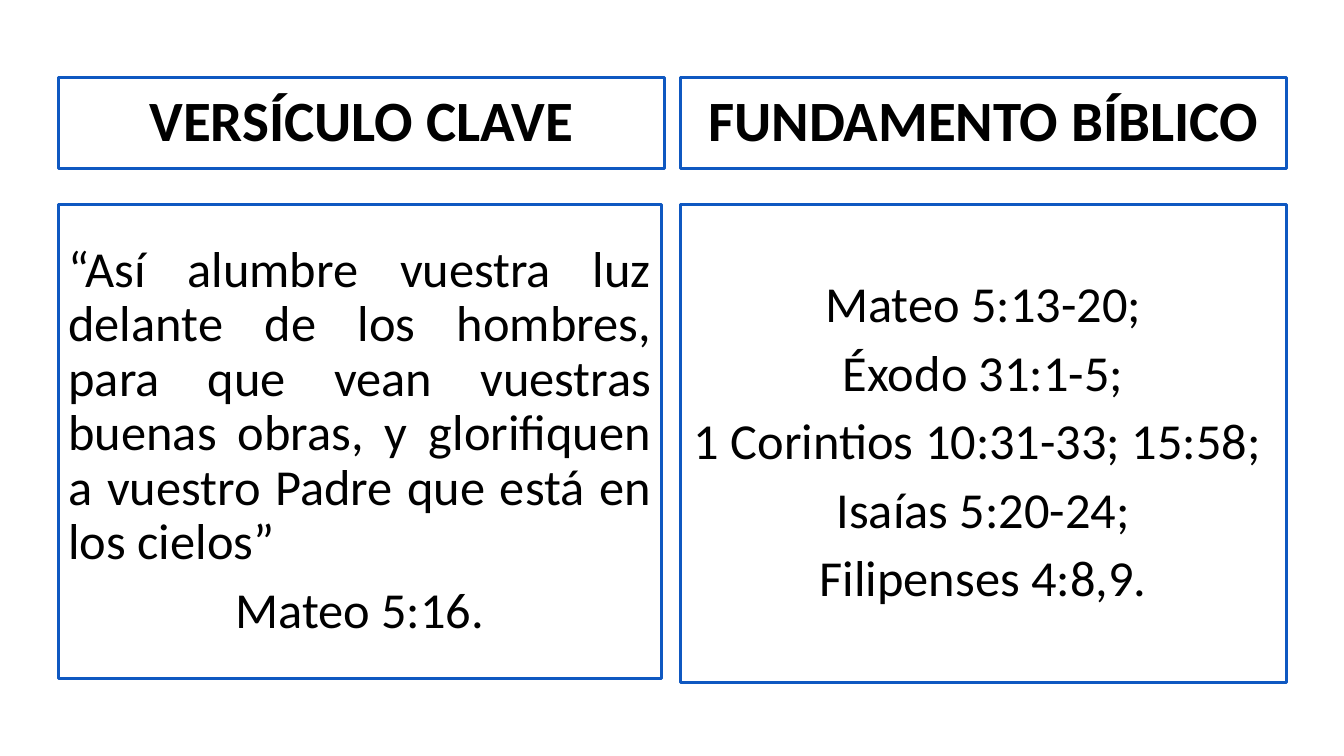
"""Build a slide with a key verse beside its Bible references."""
from pptx import Presentation
from pptx.dml.color import RGBColor
from pptx.enum.shapes import MSO_SHAPE
from pptx.enum.text import MSO_ANCHOR, PP_ALIGN
from pptx.util import Pt

BLACK = RGBColor(0x00, 0x00, 0x00)
BLUE = RGBColor(0x0F, 0x58, 0xC1)
CENTER, JUSTIFY = PP_ALIGN.CENTER, PP_ALIGN.JUSTIFY

COLUMNS = [
    {
        "heading": "VERSÍCULO CLAVE",
        "body": [
            ("“Así alumbre vuestra luz delante de los hombres, para que vean "
             "vuestras buenas obras, y glorifiquen a vuestro Padre que está en "
             "los cielos”", JUSTIFY),
            ("Mateo 5:16.", CENTER),
        ],
        "body_size": (430.5, 338.4),
    },
    {
        "heading": "FUNDAMENTO BÍBLICO",
        "body": [
            ("Mateo 5:13-20;", CENTER),
            ("Éxodo 31:1-5;", CENTER),
            ("1 Corintios 10:31-33; 15:58; ", CENTER),
            ("Isaías 5:20-24;", CENTER),
            ("Filipenses 4:8,9.", CENTER),
        ],
        "body_size": (432.7, 341.3),
    },
]
LEFT, COLUMN_STEP = 41.8, 444.2
HEADING_TOP, BODY_TOP = 55.4, 146.2
HEADING_SIZE = (432.7, 64.8)


def add_box(slide, left, top, size, paragraphs, font_size, bold=False):
    """Add a blue-outlined box holding (text, alignment) paragraphs."""
    width, height = size
    sp = slide.shapes.add_shape(
        MSO_SHAPE.RECTANGLE, Pt(left), Pt(top), Pt(width), Pt(height))
    sp.shadow.inherit = False
    sp.fill.background()
    sp.line.color.rgb = BLUE
    sp.line.width = Pt(2.25)
    tf = sp.text_frame
    tf.word_wrap = True
    tf.vertical_anchor = MSO_ANCHOR.MIDDLE
    for i, (text, alignment) in enumerate(paragraphs):
        p = tf.add_paragraph() if i else tf.paragraphs[0]
        p.alignment = alignment
        p.line_spacing = 0.9
        p.space_before = Pt(10 if i else 0)
        r = p.add_run()
        r.text = text
        r.font.name = "Calibri"
        r.font.size = Pt(font_size)
        r.font.bold = bold
        r.font.color.rgb = BLACK


def main():
    """Lay out both columns and save the slide."""
    prs = Presentation()
    prs.slide_width, prs.slide_height = Pt(960), Pt(540)
    s = prs.slides.add_slide(prs.slide_layouts[6])
    for i, column in enumerate(COLUMNS):
        left = LEFT + i * COLUMN_STEP
        add_box(s, left, HEADING_TOP, HEADING_SIZE,
                [(column["heading"], CENTER)], 40.7, bold=True)
        add_box(s, left, BODY_TOP, column["body_size"], column["body"], 36)
    prs.save("out.pptx")


if __name__ == "__main__":
    main()
